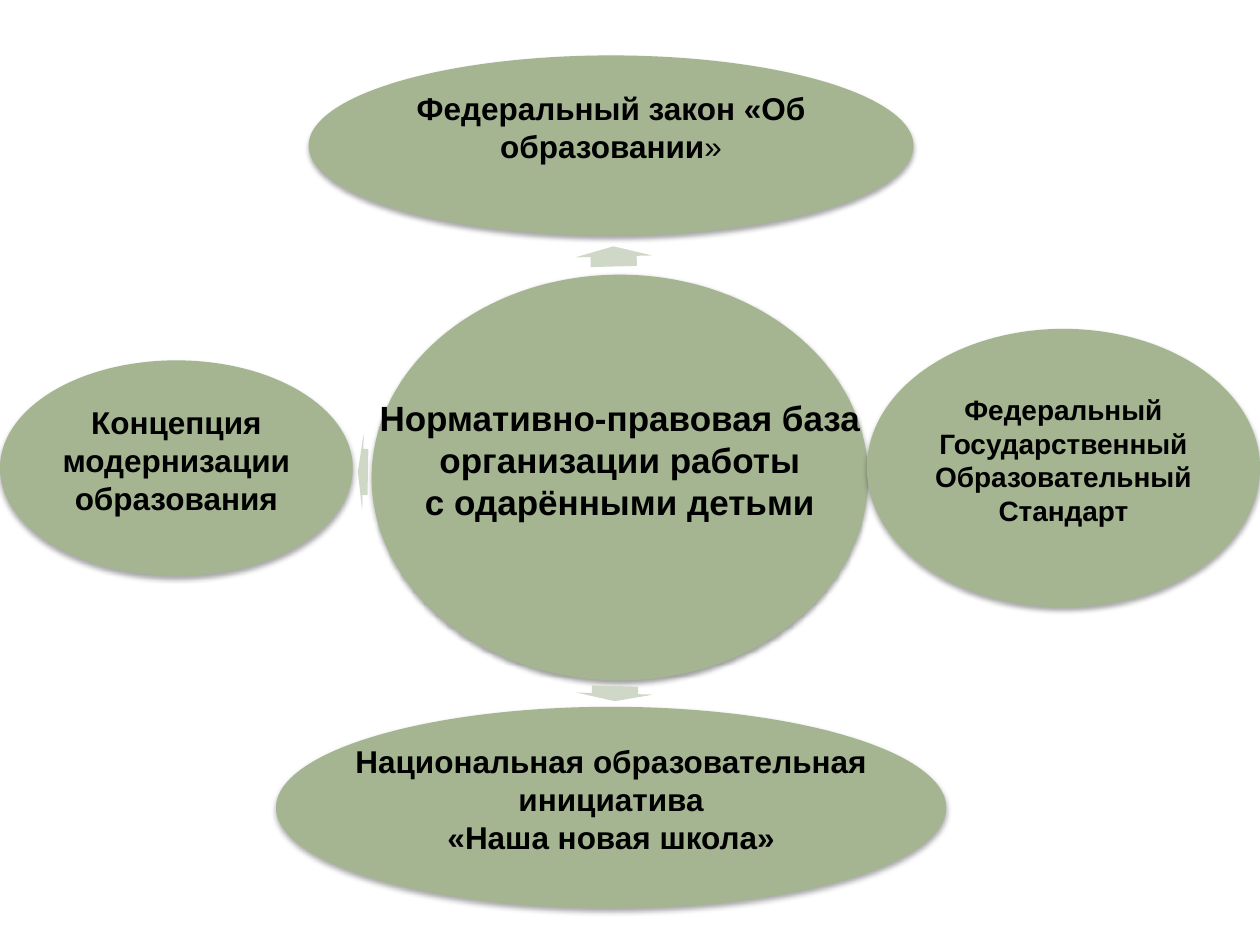
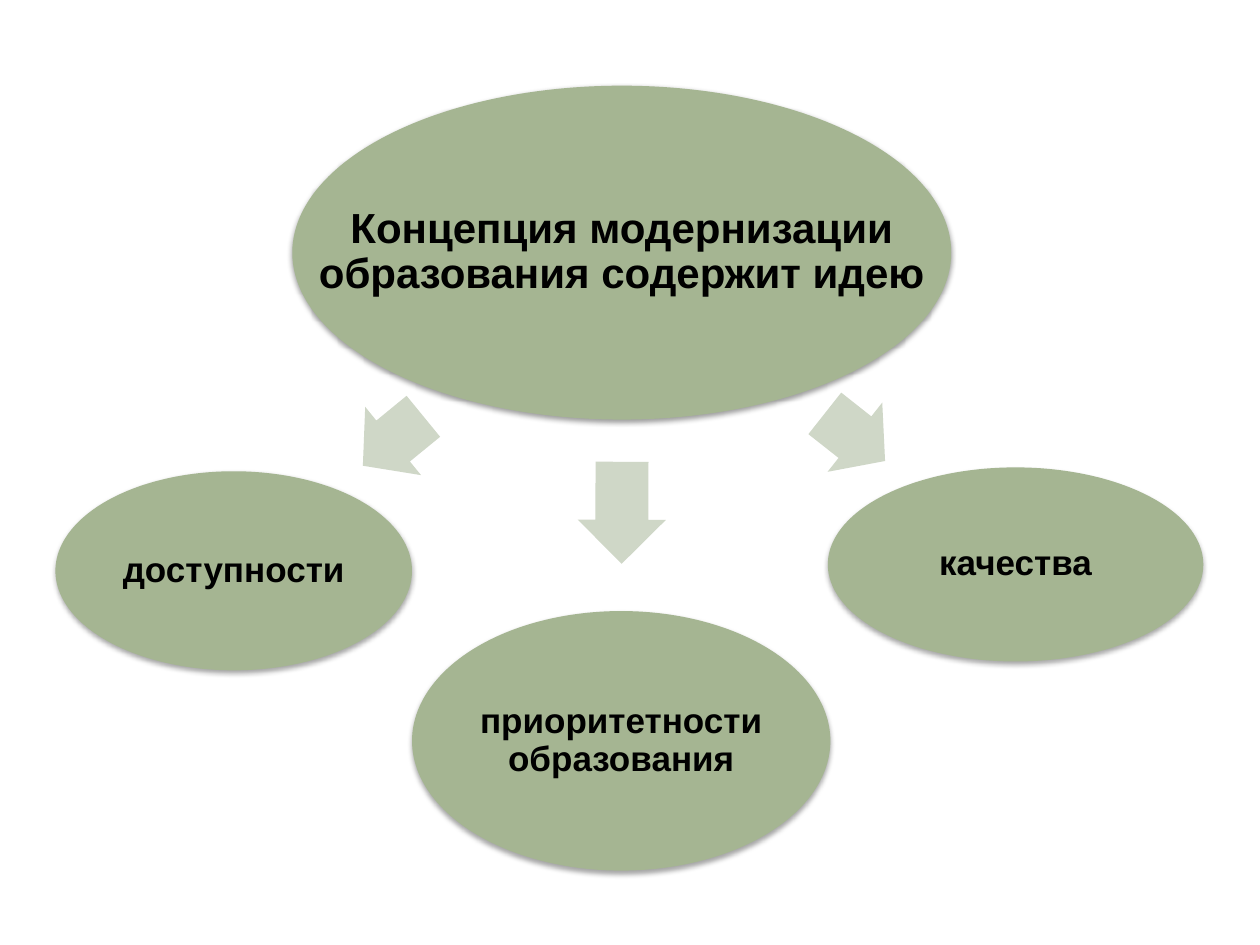
from lxml.etree import SubElement
from pptx import Presentation
from pptx.dml.color import RGBColor
from pptx.enum.shapes import MSO_SHAPE
from pptx.enum.text import MSO_ANCHOR, PP_ALIGN
from pptx.oxml.ns import qn
from pptx.util import Emu, Inches, Pt

COLUMNS, ROWS = 100, 75
BLANK_LAYOUT = 6


def color(hex_string):
    return RGBColor.from_string(hex_string)


class Diagram:
    """Ovals joined by block arrows; places are in grid columns and rows."""
    FONT = "Arial"
    TEXT = "000000"
    OVAL = "A5B592"
    ARROW = "CFD7C7"
    INSET = Inches(0.03)

    def __init__(self, presentation):
        self.presentation = presentation
        self.slide = None

    def new_slide(self):
        layout = self.presentation.slide_layouts[BLANK_LAYOUT]
        self.slide = self.presentation.slides.add_slide(layout)

    def place(self, left, top, width, height):
        column = self.presentation.slide_width / COLUMNS
        row = self.presentation.slide_height / ROWS
        return [Emu(round(length)) for length in
                (left * column, top * row, width * column, height * row)]

    def shape(self, kind, box, fill):
        shape = self.slide.shapes.add_shape(kind, *self.place(*box))
        shape.shadow.inherit = False
        shape.fill.solid()
        shape.fill.fore_color.rgb = color(fill)
        shape.line.fill.background()
        return shape

    def arrow(self, box, rotation):
        arrow = self.shape(MSO_SHAPE.RIGHT_ARROW, box, self.ARROW)
        arrow.adjustments[0] = 0.6
        arrow.adjustments[1] = 0.5
        arrow.rotation = rotation

    def drop_shadow(self, shape, distance, opacity):
        effects = shape._element.spPr.find(qn("a:effectLst"))
        shadow = SubElement(effects, qn("a:outerShdw"), {
            "blurRad": str(Pt(3.1)), "dist": str(Pt(distance)),
            "dir": "5400000", "rotWithShape": "0"})
        shade = SubElement(shadow, qn("a:srgbClr"), val="000000")
        SubElement(shade, qn("a:alpha"), val=str(opacity * 1000))

    def oval(self, box, paragraphs, size, hub=False, lift=0, spacing=1.0):
        """Each paragraph lists (text, bold) runs; lift is extra space under the text, in inches."""
        oval = self.shape(MSO_SHAPE.OVAL, box, self.OVAL)
        self.drop_shadow(oval, *((1.6, 38) if hub else (1.8, 35)))
        self.label(box, paragraphs, size, lift, spacing)

    def label(self, box, paragraphs, size, lift, spacing):
        frame = self.slide.shapes.add_textbox(*self.place(*box)).text_frame
        frame.word_wrap = True
        frame.vertical_anchor = MSO_ANCHOR.MIDDLE
        frame.margin_left = frame.margin_right = frame.margin_top = self.INSET
        frame.margin_bottom = self.INSET + Inches(lift)
        for index, runs in enumerate(paragraphs):
            paragraph = frame.add_paragraph() if index else frame.paragraphs[0]
            paragraph.alignment = PP_ALIGN.CENTER
            paragraph.line_spacing = spacing
            for text, bold in runs:
                run = paragraph.add_run()
                run.text = text
                run.font.name = self.FONT
                run.font.size = Pt(size)
                run.font.bold = bold
                run.font.color.rgb = color(self.TEXT)


def bold_lines(*lines):
    return [[(line, True)] for line in lines]


def legal_basis(diagram):
    diagram.new_slide()
    diagram.oval((29.5, 21.8, 39.4, 32.2),
                 bold_lines("Нормативно-правовая база организации работы",
                            "с одарёнными детьми"),
                 20, hub=True, lift=0.29)
    for box, rotation in (((47.9, 17.3, 1.6, 6.1), 268.5),
                          ((48.2, 52, 1.2, 6.1), 91.5),
                          ((28.4, 34.4, 0.8, 6.1), 181.1)):
        diagram.arrow(box, rotation)
    law = [[("Федеральный закон «Об образовании", True), ("»", False)]]
    standard = bold_lines("Федеральный Государственный Образовательный Стандарт")
    initiative = bold_lines("Национальная образовательная инициатива",
                            "«Наша новая школа»")
    concept = bold_lines("Концепция модернизации образования")
    for box, paragraphs, size, lift in (
            ((24.5, 4.4, 48, 14.3), law, 18, 0.29),
            ((68.8, 26.1, 31.2, 22.1), standard, 16, 0.13),
            ((21.9, 56.1, 53.2, 16), initiative, 18, 0.14),
            ((0, 28.6, 28, 17.1), concept, 18, 0.13)):
        diagram.oval(box, paragraphs, size, lift=lift)


def modernization_concept(diagram):
    diagram.new_slide()
    diagram.oval((23.2, 6.8, 52.3, 26.5),
                 bold_lines("Концепция модернизации образования содержит идею"),
                 24, hub=True, spacing=0.9)
    for arrow_box, rotation, oval_box, idea in (
            ((64.8, 31.2, 6.1, 7), 38.3, (65.7, 37.1, 29.8, 15.4), "качества"),
            ((45.3, 37.2, 8.1, 7), 90.2, (32.7, 48.5, 33.2, 20.6),
             "приоритетности образования"),
            ((28.1, 31.5, 6.2, 7), 140.7, (4.4, 37.4, 28.3, 15.8), "доступности")):
        diagram.arrow(arrow_box, rotation)
        diagram.oval(oval_box, bold_lines(idea), 20, spacing=0.9)


def main():
    presentation = Presentation()
    presentation.slide_width = Inches(10)
    presentation.slide_height = Inches(7.5)
    diagram = Diagram(presentation)
    legal_basis(diagram)
    modernization_concept(diagram)
    presentation.save("out.pptx")


if __name__ == "__main__":
    main()
